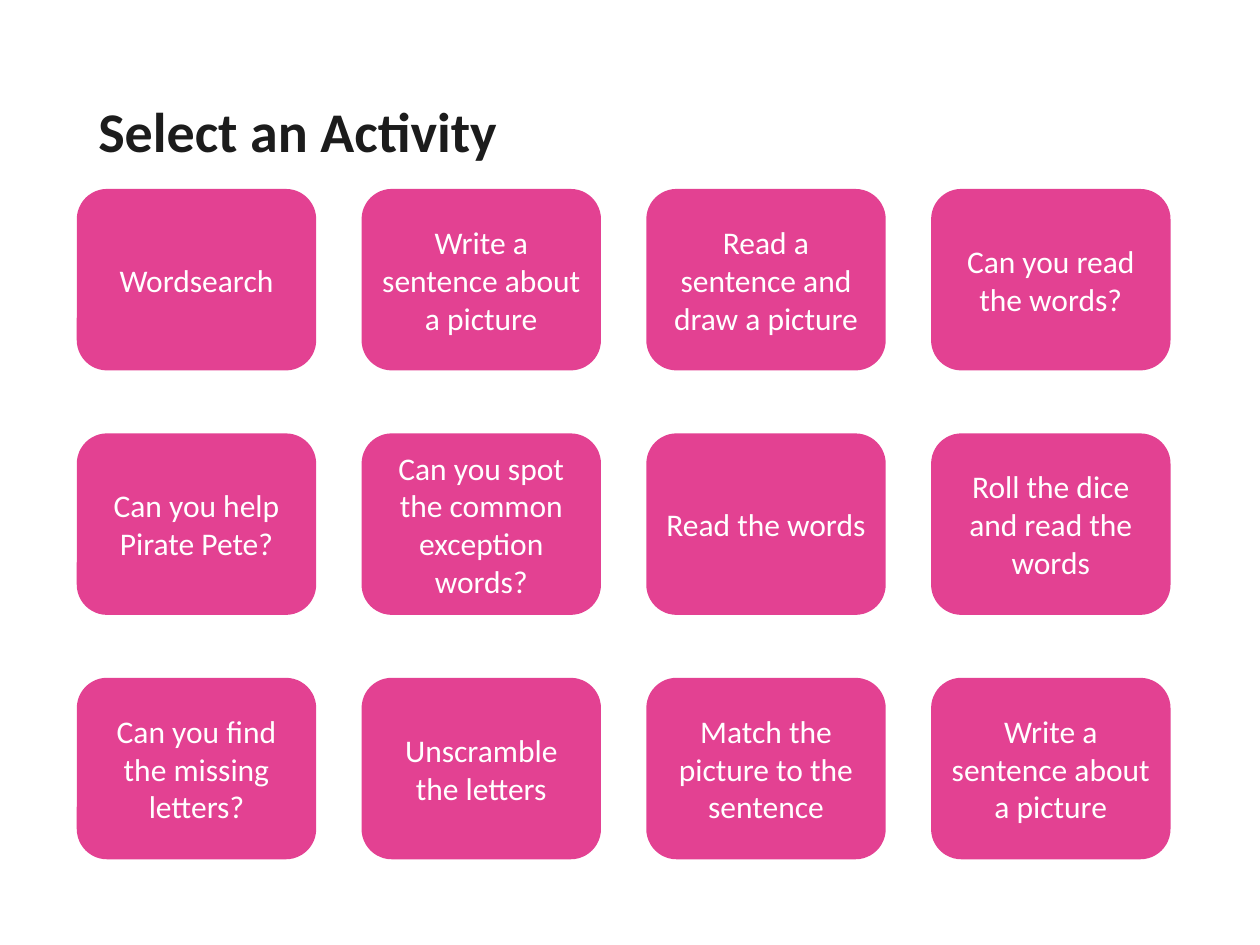
"""Build the activity menu slide: a title above a grid of rounded cards."""
from pptx import Presentation
from pptx.dml.color import RGBColor
from pptx.enum.shapes import MSO_SHAPE
from pptx.enum.text import MSO_ANCHOR, MSO_AUTO_SIZE, PP_ALIGN
from pptx.util import Inches, Pt

TITLE = "Select an Activity"
ACTIVITIES = [
    ["Wordsearch", "Write a sentence about a picture",
     "Read a sentence and draw a picture", "Can you read the words?"],
    ["Can you help Pirate Pete?", "Can you spot the common exception words?",
     "Read the words", "Roll the dice and read the words"],
    ["Can you find the missing letters?", "Unscramble the letters",
     "Match the picture to the sentence", "Write a sentence about a picture"],
]
COLORS = {"card": "E34192", "card_text": "FFFFFF", "title": "1C1C1C"}
FONT = "Calibri"
SLIDE_W, SLIDE_H = 10, 7.5
GRID_LEFT, GRID_TOP = 0.61, 1.5
CARD_W, CARD_H = 1.9, 1.44
GAP_X, GAP_Y = 0.36, 0.5


def write(sp, text, size, color, align, inset, bold=False):
    """Fill a shape with one formatted, vertically centred run."""
    tf = sp.text_frame
    tf.word_wrap = True
    tf.auto_size = MSO_AUTO_SIZE.NONE
    tf.vertical_anchor = MSO_ANCHOR.MIDDLE
    tf.margin_left = tf.margin_right = Inches(inset)
    tf.margin_top = tf.margin_bottom = Inches(inset)
    p = tf.paragraphs[0]
    p.alignment = align
    r = p.add_run()
    r.text = text
    r.font.name = FONT
    r.font.size = Pt(size)
    r.font.bold = bold
    r.font.color.rgb = RGBColor.from_string(COLORS[color])
    return p


def add_card(s, row, col, text):
    """Place one activity card in its grid cell."""
    left = GRID_LEFT + col * (CARD_W + GAP_X)
    top = GRID_TOP + row * (CARD_H + GAP_Y)
    sp = s.shapes.add_shape(MSO_SHAPE.ROUNDED_RECTANGLE, Inches(left),
                            Inches(top), Inches(CARD_W), Inches(CARD_H))
    sp.shadow.inherit = False
    sp.fill.solid()
    sp.fill.fore_color.rgb = RGBColor.from_string(COLORS["card"])
    sp.line.fill.background()
    write(sp, text, 18, "card_text", PP_ALIGN.CENTER, 0.08)


def main():
    """Create and save the slide."""
    prs = Presentation()
    prs.slide_width, prs.slide_height = Inches(SLIDE_W), Inches(SLIDE_H)
    s = prs.slides.add_slide(prs.slide_layouts[5])
    title = s.shapes.title
    title.left, title.top = Inches(0.5), Inches(0.52)
    title.width, title.height = Inches(8.99), Inches(1.09)
    p = write(title, TITLE, 32, "title", PP_ALIGN.LEFT, 0.28, bold=True)
    p.line_spacing = 0.9
    for row, texts in enumerate(ACTIVITIES):
        for col, text in enumerate(texts):
            add_card(s, row, col, text)
    prs.save("out.pptx")


if __name__ == "__main__":
    main()
